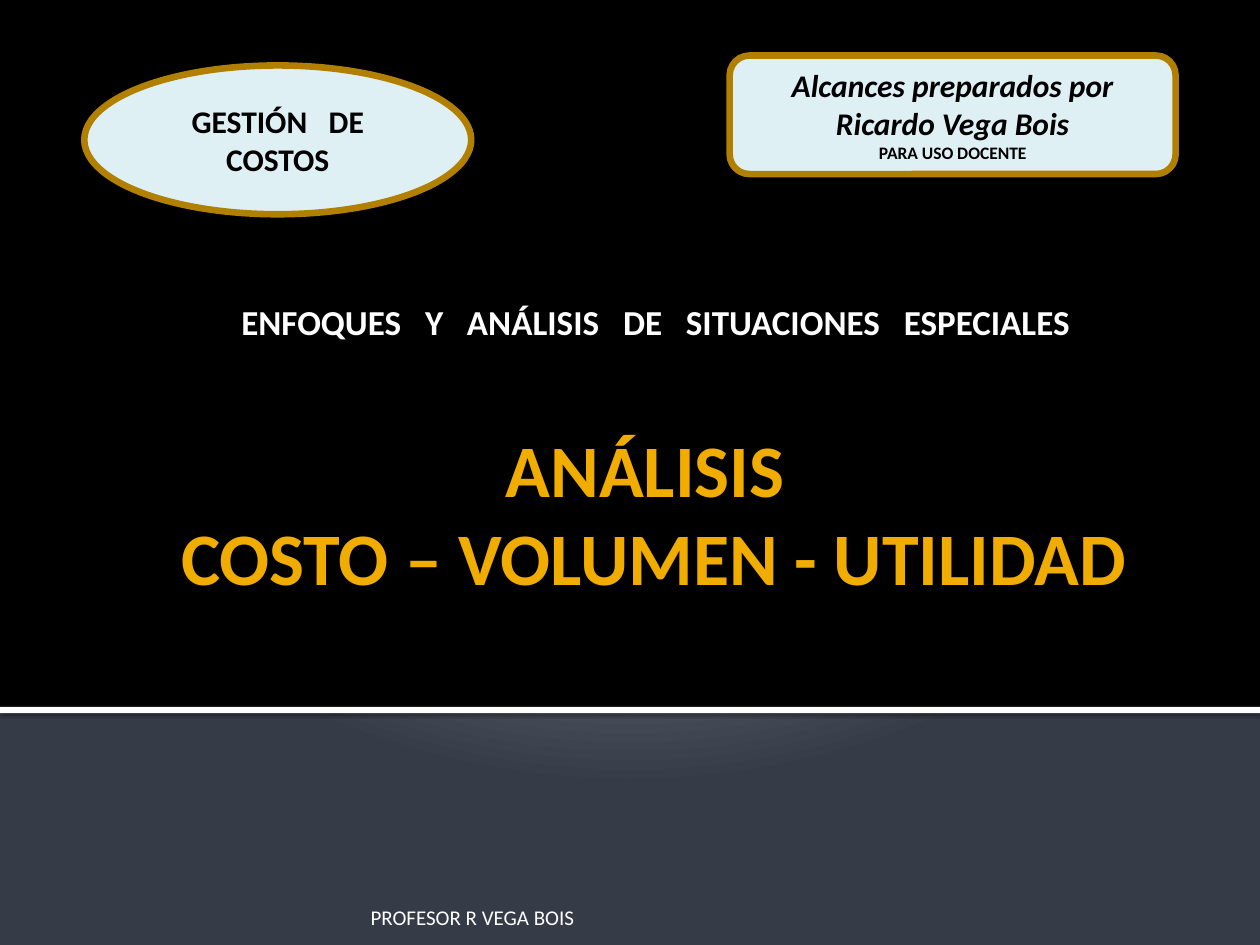
from lxml import etree
from pptx import Presentation
from pptx import util as u
from pptx.dml.color import RGBColor
from pptx.enum import shapes, text
from pptx.oxml import parse_xml
from pptx.oxml.ns import nsdecls, qn

BLACK = RGBColor(0x00, 0x00, 0x00)
WHITE = RGBColor(0xFF, 0xFF, 0xFF)
GOLD = RGBColor(0xF0, 0xAD, 0x00)
DARK_GOLD = RGBColor(0xB2, 0x80, 0x00)
PALE_BLUE = RGBColor(0xDF, 0xF0, 0xF5)

FONT = "Calibri"
WIDTH, HEIGHT = 25.4, 19.05
CENTER, LEFT = text.PP_ALIGN.CENTER, text.PP_ALIGN.LEFT
TOP, MIDDLE, BOTTOM = (text.MSO_ANCHOR.TOP, text.MSO_ANCHOR.MIDDLE,
                       text.MSO_ANCHOR.BOTTOM)
KINDS = shapes.MSO_SHAPE

# Content: each line is (words, size, bold, italic, extra width of word gaps)
TITLE = [("ANÁLISIS \vCOSTO – VOLUMEN - UTILIDAD", 42.3, True, False, 0)]
SUBTITLE = [("ENFOQUES Y ANÁLISIS DE SITUACIONES ESPECIALES", 20, True, False, 9)]
FOOTER = [("PROFESOR R VEGA BOIS", 12, False, False, 0)]
COURSE = [("GESTIÓN DE COSTOS", 18, True, False, 8.1)]
AUTHOR = [("Alcances preparados por Ricardo Vega Bois", 18, True, True, 0),
          ("PARA USO DOCENTE", 10, True, False, 0)]

# Text boxes: lines, place, colour, alignment, anchor, insets
TEXTS = [
    (TITLE, (1.9, 8.53, 22.43, 4.65), GOLD, CENTER, TOP, (0.25, 0, 0.13, 0)),
    (SUBTITLE, (1.9, 2.92, 22.43, 3.99), WHITE, CENTER, BOTTOM, (0.33, 0, 0.13, 0)),
    (FOOTER, (7.34, 17.98, 15.29, 0.76), WHITE, LEFT, BOTTOM, (0.13, 0.13, 0.13, 0)),
]
BADGES = [
    (KINDS.OVAL, COURSE, (1.7, 1.32, 7.8, 3)),
    (KINDS.ROUNDED_RECTANGLE, AUTHOR, (14.71, 1.12, 8.99, 2.39)),
]
GLOW = [(0, "C1C5D3"), (12, "C1C5D3"), (20, "BFC4D2"), (100, "353B47")]


def cm(values):
    return [u.Cm(value) for value in values]


def add_span(para, words, size, bold, italic, color):
    span = para.add_run()
    span.text = words
    font = span.font
    font.name, font.size = FONT, u.Pt(size)
    font.bold, font.italic = bold, italic
    font.color.rgb = color
    return span


def write(box, lines, color, align, anchor, insets=(0.25, 0.13, 0.25, 0.13)):
    frame = box.text_frame
    frame.word_wrap = True
    frame.vertical_anchor = anchor
    (frame.margin_left, frame.margin_top,
     frame.margin_right, frame.margin_bottom) = cm(insets)
    for index, (words, size, bold, italic, gap) in enumerate(lines):
        para = frame.add_paragraph() if index else frame.paragraphs[0]
        para.alignment = align
        style = (size, bold, italic, color)
        if gap:  # wide word gaps come from character spacing
            for number, word in enumerate(words.split()):
                if number:
                    space = add_span(para, " ", *style)
                    space.font._element.set("spc", str(round(gap * 100)))
                add_span(para, word, *style)
        else:
            for number, part in enumerate(words.split("\v")):
                if number:
                    para.add_line_break()
                add_span(para, part, *style)


def add_block(slide, kind, place, fill, line=None):
    block = slide.shapes.add_shape(kind, *cm(place))
    block.shadow.inherit = False
    block.fill.solid()
    block.fill.fore_color.rgb = fill
    if line is None:
        block.line.fill.background()
    else:
        block.line.color.rgb = line
        block.line.width = u.Pt(3.78)
    return block


def set_glow(slide):
    fill = slide.background.fill
    fill.solid()
    properties = slide._element.cSld.find(qn("p:bg")).find(qn("p:bgPr"))
    stops = "".join(f'<a:gs pos="{place * 1000}"><a:srgbClr val="{color}"/></a:gs>'
                    for place, color in GLOW)
    gradient = parse_xml(
        f'<a:gradFill {nsdecls("a")} rotWithShape="1"><a:gsLst>{stops}</a:gsLst>'
        '<a:path path="circle"><a:fillToRect l="10000" t="-25000" r="10000" '
        'b="125000"/></a:path></a:gradFill>')
    properties.replace(properties.find(qn("a:solidFill")), gradient)


def add_shadow(block):
    effects = block._element.spPr.find(qn("a:effectLst"))
    shadow = etree.SubElement(effects, qn("a:outerShdw"), blurRad=str(u.Pt(2.5)),
                              dist=str(u.Pt(0.8)), dir="5400000", algn="tl")
    color = etree.SubElement(shadow, qn("a:srgbClr"), val="000000")
    etree.SubElement(color, qn("a:alpha"), val="60000")


def main():
    deck = Presentation()
    deck.slide_width, deck.slide_height = cm((WIDTH, HEIGHT))
    slide = deck.slides.add_slide(deck.slide_layouts[6])

    # Background, black panel and white divider
    set_glow(slide)
    add_block(slide, KINDS.RECTANGLE, (0, 0, WIDTH, 14.27), BLACK)
    add_shadow(add_block(slide, KINDS.RECTANGLE, (0, 14.25, WIDTH, 0.13), WHITE))

    # Title, subtitle and footer
    for lines, place, color, align, anchor, insets in TEXTS:
        box = slide.shapes.add_textbox(*cm(place))
        write(box, lines, color, align, anchor, insets)

    # Course and author badges
    for kind, lines, place in BADGES:
        badge = add_block(slide, kind, place, PALE_BLUE, DARK_GOLD)
        write(badge, lines, BLACK, CENTER, MIDDLE)

    deck.save("out.pptx")


if __name__ == "__main__":
    main()
